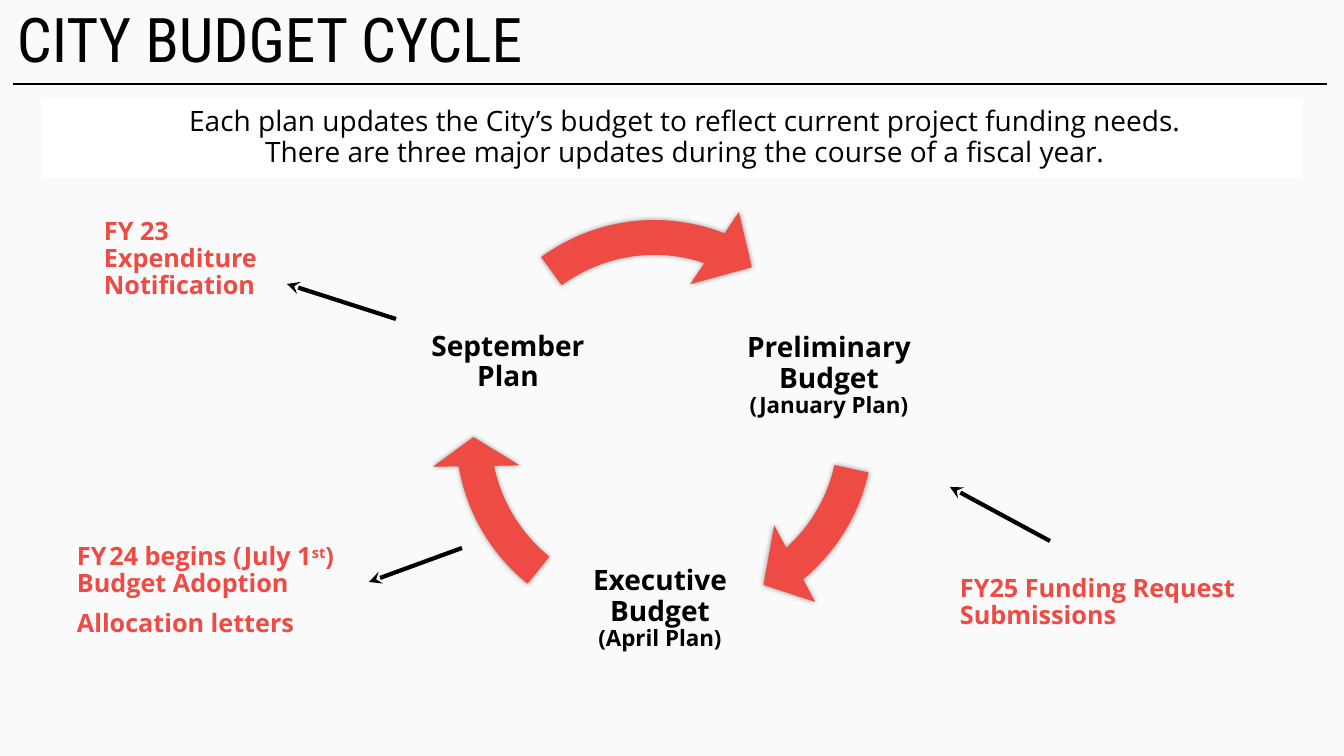
import dataclasses
import lxml.etree
import pptx
import pptx.dml.color
import pptx.enum.dml
import pptx.enum.shapes
import pptx.enum.text
import pptx.oxml
import pptx.oxml.ns
import pptx.util

SCALE = 914400 / 100.8
SHAPE = pptx.enum.shapes.MSO_SHAPE
ALIGN = pptx.enum.text.PP_ALIGN


@dataclasses.dataclass(frozen=True)
class Theme:
    back: str = "FAFAFA"
    white: str = "FFFFFF"
    ink: str = "000000"
    red: str = "ED4B44"
    head: str = "Roboto Condensed"
    body: str = "Open Sans"
    title: int = 44
    large: int = 20
    note: int = 18
    small: int = 16
    gap: int = 8


THEME = Theme()


def px(n):
    return pptx.util.Emu(round(n * SCALE))


def color(code):
    return pptx.dml.color.RGBColor.from_string(code)


def style(font, size, code, bold=False, face=THEME.body):
    font.name = face
    font.size = pptx.util.Pt(size)
    font.bold = bold
    font.color.rgb = color(code)


def setup(frame, left, side, edge):
    frame.word_wrap = True
    frame.auto_size = pptx.enum.text.MSO_AUTO_SIZE.NONE
    frame.vertical_anchor = pptx.enum.text.MSO_ANCHOR.MIDDLE
    frame.margin_left, frame.margin_right = px(left), px(side)
    frame.margin_top = frame.margin_bottom = px(edge)


def write(frame, lines, align, code, bold):
    frame.text = "\n".join(text for text, size in lines)
    for para, (text, size) in zip(frame.paragraphs, lines):
        para.alignment = align
        para.line_spacing = 0.9
        for run in para.runs:
            style(run.font, size, code, bold)


def panel(slide, box, fill):
    shape = slide.shapes.add_shape(SHAPE.ROUNDED_RECTANGLE, *map(px, box))
    shape.adjustments[0] = 0
    shape.shadow.inherit = False
    shape.fill.solid()
    shape.fill.fore_color.rgb = color(fill)
    shape.line.fill.background()
    setup(shape.text_frame, 36, 10, 5)
    return shape.text_frame


def link(slide, start, end, width, arrow=False):
    line = slide.shapes.add_connector(
        pptx.enum.shapes.MSO_CONNECTOR.STRAIGHT, *map(px, (*start, *end)))
    line.line.color.rgb = color(THEME.ink)
    line.line.width = pptx.util.Pt(width)
    if arrow:
        tail = lxml.etree.SubElement(
            line.line._get_or_add_ln(), pptx.oxml.ns.qn("a:tailEnd"))
        tail.set("type", "stealth")
    lxml.etree.SubElement(
        line._element.spPr, pptx.oxml.ns.qn("a:effectLst"))


def header(slide, box):
    x, y, w, h = box
    link(slide, (x + 13, y + 84), (x + w - 17, y + 84), 1)
    title = slide.shapes.title
    title.left, title.top, title.width, title.height = map(px, box)
    frame = title.text_frame
    frame.text = "CITY BUDGET CYCLE"
    setup(frame, 17, 10, 5)
    para = frame.paragraphs[0]
    para.alignment = ALIGN.LEFT
    para.line_spacing = 0.9
    style(para.runs[0].font, THEME.title, THEME.ink, face=THEME.head)


def intro(slide, box):
    write(panel(slide, box, THEME.white), [
        ("Each plan updates the City’s budget to reflect current project "
         "funding needs.", THEME.large),
        ("There are three major updates during the course of a fiscal year.",
         THEME.large),
    ], ALIGN.CENTER, THEME.ink, False)


def glow(shape):
    shape.shadow.inherit = False
    halo = pptx.oxml.parse_xml(
        f'<a:outerShdw {pptx.oxml.ns.nsdecls("a")} blurRad="50800" dist="0" '
        f'algn="ctr" rotWithShape="0"><a:srgbClr val="{THEME.ink}">'
        '<a:alpha val="40000"/></a:srgbClr></a:outerShdw>')
    shape._element.spPr.find(pptx.oxml.ns.qn("a:effectLst")).append(halo)


def cycle(slide, box):
    left, top, w, h = box
    arcs = [
        (48, 20, 0, (0.08, 7.48, 29.64, 7.42, 0.1)),
        (14, 23, 0, (0.08, 5.76, 101.72, 77.26, 0.1)),
        (21, 0, 8.3, (0.08, 8.3, 169.14, 135.25, 0.1)),
    ]
    for x, y, turn, bends in arcs:
        arc = slide.shapes.add_shape(
            SHAPE.CIRCULAR_ARROW, *map(px, (left + x, top + y, 435, 435)))
        arc.rotation = turn
        for i, bend in enumerate(bends):
            arc.adjustments[i] = bend
        arc.fill.solid()
        arc.fill.fore_color.rgb = color(THEME.red)
        arc.line.fill.background()
        glow(arc)
    steps = [
        (314, 90, 198, "Preliminary Budget", "(January Plan)"),
        (152, 323, 184, "Executive Budget", "(April Plan)"),
        (0, 76, 184, "September Plan", ""),
    ]
    for x, y, wide, name, month in steps:
        label = slide.shapes.add_textbox(
            *map(px, (left + x, top + y, wide, 184)))
        setup(label.text_frame, 3, 3, 3)
        lines = [(name, THEME.large)]
        if month:
            lines.append((month, THEME.small))
        write(label.text_frame, lines, ALIGN.CENTER, THEME.ink, True)


def note(slide, box, lines, start, end):
    x, y, w, h = box
    frame = panel(slide, box, THEME.back)
    write(frame, [(text, THEME.note) for text in lines],
          ALIGN.LEFT, THEME.red, True)
    link(slide, (x + start[0], y + start[1]), (x + end[0], y + end[1]),
         3, True)
    return frame.paragraphs


def launch(slide, box):
    paras = note(slide, box,
                 ["FY", "Budget Adoption", "Allocation letters"],
                 (421, 24), (328, 58))
    tail = [(" ", THEME.gap, 0), ("24 begins (July 1", THEME.note, 0),
            ("st", THEME.note, 30000), (")", THEME.note, 0)]
    for text, size, lift in tail:
        run = paras[0].add_run()
        run.text = text
        style(run.font, size, THEME.red, True)
        if lift:
            run.font._element.set("baseline", str(lift))
    paras[2].space_before = pptx.util.Pt(9)


def main():
    deck = pptx.Presentation()
    deck.slide_width, deck.slide_height = px(1344), px(756)
    slide = deck.slides.add_slide(deck.slide_layouts[5])
    slide.background.fill.solid()
    slide.background.fill.fore_color.rgb = color(THEME.back)
    header(slide, (0, 0, 1344, 86))
    cycle(slide, (416, 194, 512, 507))
    intro(slide, (41, 98, 1262, 80))
    launch(slide, (41, 524, 316, 134))
    note(slide, (68, 199, 213, 121), ["FY 23", "Expenditure Notification"],
         (328, 120), (219, 85))
    note(slide, (924, 552, 345, 101), ["FY25 Funding Request", "Submissions"],
         (126, -11), (26, -65))
    deck.save("out.pptx")


if __name__ == "__main__":
    main()
